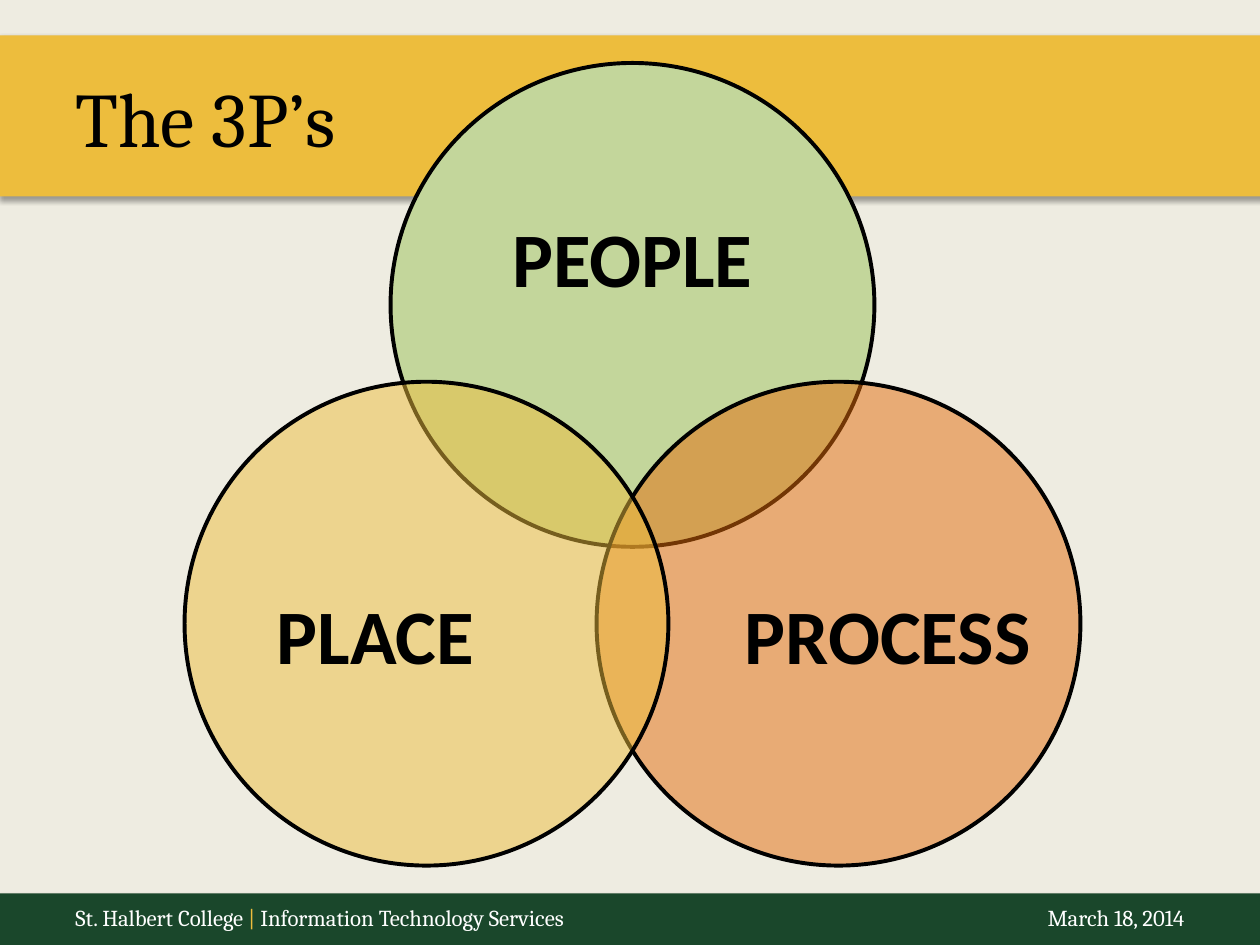
"""Build a slide with a three-circle Venn diagram of people, process and place."""
from lxml.etree import SubElement
from pptx import Presentation
from pptx.dml.color import RGBColor
from pptx.enum.shapes import MSO_SHAPE as Shape
from pptx.enum.text import MSO_ANCHOR as Anchor, PP_ALIGN as Align
from pptx.oxml import parse_xml
from pptx.oxml.ns import nsdecls, qn
from pptx.util import Inches, Pt

COLORS = {"paper": "EEECE1", "green": "1A472B", "gold": "EDBD3D", "leaf": "C3D69B",
          "orange": "E46C0A", "black": "000000", "white": "FFFFFF"}
WIDTH, HEIGHT = 10, 7.5
MARGIN = 0.05 * WIDTH
DIAMETER = 3.84
CENTER_X, TOP_Y, LOWER_Y, SPREAD = 5.02, 0.5, 3.03, 1.635

TITLE = "The 3P’s"
FOOTER = [("St. Halbert College ", "white"), ("| ", "gold"),
          ("Information Technology Services \tMarch 18, 2014", "white")]
BANDS = [("green", 7.09, 0.41), ("gold", 0.28, 1.28)]
CIRCLES = [
    {"label": "PEOPLE", "color": "leaf", "alpha": 100, "column": 0, "top": TOP_Y,
     "box": (3.61, 1.17, 2.82, 1.73), "align": Align.CENTER, "spacing": 1.0},
    {"label": "PROCESS", "color": "orange", "alpha": 50, "column": 1, "top": LOWER_Y,
     "box": (5.91, 4.02, 2.3, 2.11), "align": Align.LEFT, "spacing": 0.9},
    {"label": "PLACE", "color": "gold", "alpha": 50, "column": -1, "top": LOWER_Y,
     "box": (1.83, 4.02, 2.3, 2.11), "align": Align.CENTER, "spacing": 0.9},
]
SHADOW = (f'<a:effectLst {nsdecls("a")}><a:outerShdw blurRad="39370" dist="22860" dir="5400000" '
          'rotWithShape="0"><a:srgbClr val="000000"><a:alpha val="35000"/></a:srgbClr>'
          '</a:outerShdw></a:effectLst>')


def rgb(name):
    return RGBColor.from_string(COLORS[name])


def add_filled(shapes, kind, box, color, alpha=100):
    shape = shapes.add_shape(kind, *map(Inches, box))
    shape.shadow.inherit = False
    shape.fill.solid()
    shape.fill.fore_color.rgb = rgb(color)
    if alpha < 100:
        color_element = shape.fill._xPr.find(qn("a:solidFill"))[0]
        SubElement(color_element, qn("a:alpha")).set("val", str(alpha * 1000))
    return shape


def add_text(shapes, box, runs, size, font, bold=False, insets=(0.1, 0.05, 0.1, 0.05)):
    frame = shapes.add_textbox(*map(Inches, box)).text_frame
    frame.word_wrap = True
    frame.vertical_anchor = Anchor.MIDDLE
    (frame.margin_left, frame.margin_top,
     frame.margin_right, frame.margin_bottom) = map(Inches, insets)
    paragraph = frame.paragraphs[0]
    for text, color in runs:
        run = paragraph.add_run()
        run.text = text
        run.font.size, run.font.name, run.font.bold = Pt(size), font, bold
        run.font.color.rgb = rgb(color)
    return paragraph


def add_bands(slide):
    for color, top, height in BANDS:
        band = add_filled(slide.shapes, Shape.RECTANGLE, (0, top, WIDTH + 0.02, height), color)
        band.line.fill.background()
        properties = band._element.spPr
        properties.replace(properties.find(qn("a:effectLst")), parse_xml(SHADOW))


def add_footer(slide):
    paragraph = add_text(slide.shapes, (MARGIN, 7.18, WIDTH - 2 * MARGIN, 0.4), FOOTER,
                         13, "Cambria", insets=(0.1, 0, 0.1, 0.2))
    tabs = SubElement(paragraph._p.get_or_add_pPr(), qn("a:tabLst"))
    tab = SubElement(tabs, qn("a:tab"))
    tab.set("pos", str(Inches(8.8)))
    tab.set("algn", "r")


def add_venn(slide):
    group = slide.shapes.add_group_shape()
    for circle in CIRCLES:
        left = CENTER_X + circle["column"] * SPREAD - DIAMETER / 2
        shape = add_filled(group.shapes, Shape.OVAL, (left, circle["top"], DIAMETER, DIAMETER),
                           circle["color"], circle["alpha"])
        shape.line.color.rgb = rgb("black")
        shape.line.width = Pt(2.25)
        paragraph = add_text(group.shapes, circle["box"], [(circle["label"], "black")],
                             44, "Calibri", True, (0, 0, 0, 0))
        paragraph.alignment = circle["align"]
        paragraph.line_spacing = circle["spacing"]


def main():
    presentation = Presentation()
    presentation.slide_width, presentation.slide_height = Inches(WIDTH), Inches(HEIGHT)
    slide = presentation.slides.add_slide(presentation.slide_layouts[6])
    slide.background.fill.solid()
    slide.background.fill.fore_color.rgb = rgb("paper")
    add_bands(slide)
    add_text(slide.shapes, (MARGIN, 0.3, WIDTH - 2 * MARGIN, 1.25), [(TITLE, "black")],
             44, "Cambria")
    add_footer(slide)
    add_venn(slide)
    presentation.save("out.pptx")


if __name__ == "__main__":
    main()
